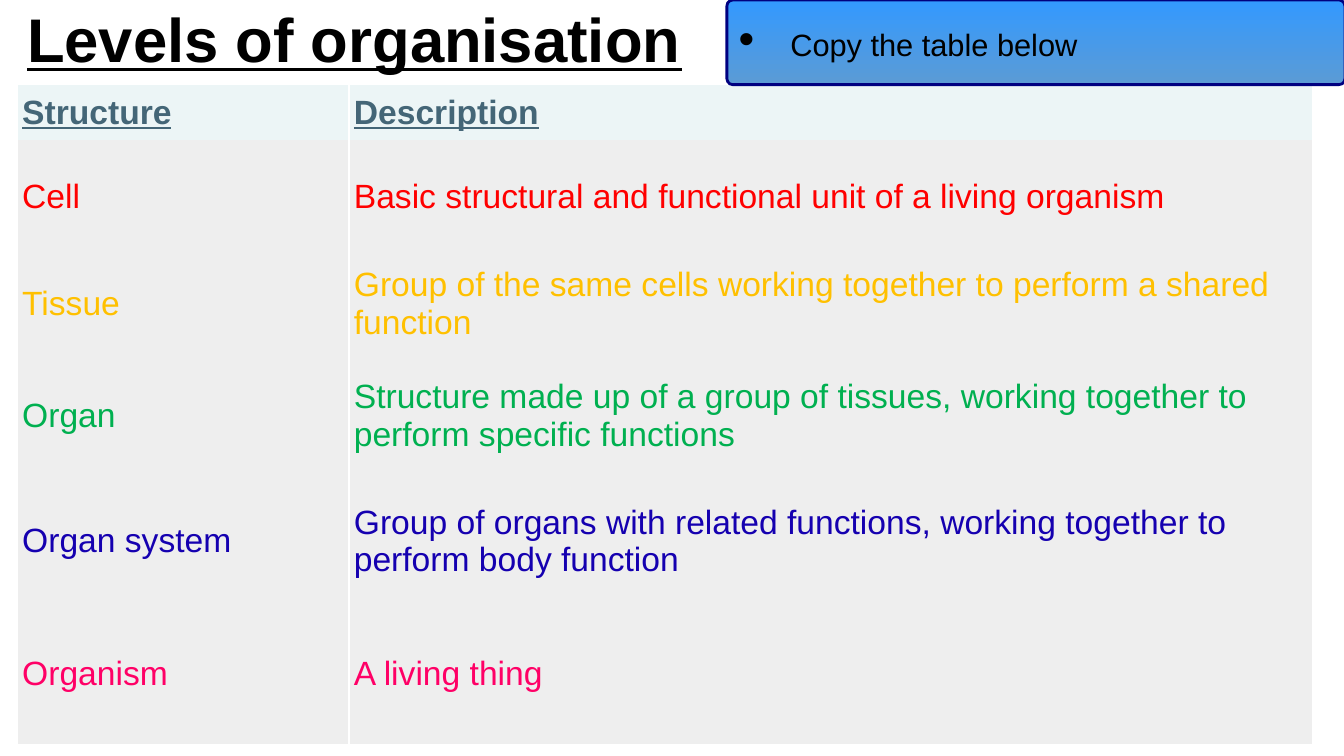
"""Build the slide on levels of organisation."""
from dataclasses import dataclass

from lxml import etree
from pptx import Presentation
from pptx import util as u
from pptx.dml.color import RGBColor
from pptx.enum import shapes, text
from pptx.oxml import ns


@dataclass(frozen=True)
class Theme:
    font: str = "Arial"
    ink: str = "000000"
    head: str = "446677"
    band: str = "ECF5F6"
    body: str = "EEEEEE"
    rule: str = "FFFFFF"
    edge: str = "000080"
    top: str = "3399FF"
    base: str = "5B9BD5"
    title: int = 44
    cell: int = 24
    task: int = 22
    mark: int = 32


THEME = Theme()
NO_GRID = "{2D5ABB26-0587-4C30-8999-92F81FD0307C}"
COLS = (3.29, 9.56)
ROWS = (
    (0.55, THEME.head, "Structure", "Description"),
    (1.13, "FF0000", "Cell", "Basic structural and functional unit of a living organism"),
    (0.99, "FFC000", "Tissue",
     "Group of the same cells working together to perform a shared function"),
    (1.23, "00B050", "Organ",
     "Structure made up of a group of tissues, working together to perform specific functions"),
    (1.26, "1500B0", "Organ system",
     "Group of organs with related functions, working together to perform body function"),
    (1.38, "FF0066", "Organism", "A living thing"),
)


def put(item, form):
    for name, val in form.items():
        setattr(item, name, val)


def box(*sides):
    return [u.Inches(side) for side in sides]


def add_run(para, words, size, tint, bold=False, line=False):
    run = para.add_run()
    run.text = words
    put(run.font, {"name": THEME.font, "size": u.Pt(size), "bold": bold, "underline": line})
    run.font.color.rgb = RGBColor.from_string(tint)


def add_title(slide, words):
    frame = slide.shapes.add_textbox(*box(0.17, -0.2, 9, 1.25)).text_frame
    put(frame, {"word_wrap": True, "vertical_anchor": text.MSO_ANCHOR.MIDDLE})
    para = frame.paragraphs[0]
    para.line_spacing = 0.9
    add_run(para, words, THEME.title, THEME.ink, True, True)


def add_rules(cell):
    props = cell._tc.get_or_add_tcPr()
    for spot, tag in enumerate(("a:lnL", "a:lnR")):
        line = etree.Element(ns.qn(tag), w=str(u.Pt(1.5)))
        fill = etree.SubElement(line, ns.qn("a:solidFill"))
        etree.SubElement(fill, ns.qn("a:srgbClr"), val=THEME.rule)
        props.insert(spot, line)


def fill_cell(cell, words, tint, head):
    pad = u.Inches(0.05)
    put(cell, {"margin_left": pad, "margin_right": pad, "margin_top": pad,
               "margin_bottom": pad, "vertical_anchor": text.MSO_ANCHOR.MIDDLE})
    cell.fill.solid()
    cell.fill.fore_color.rgb = RGBColor.from_string(THEME.band if head else THEME.body)
    add_run(cell.text_frame.paragraphs[0], words, THEME.cell, tint, head, head)
    add_rules(cell)


def add_grid(slide):
    high = sum(row[0] for row in ROWS)
    place = box(0.17, 0.84, sum(COLS), high)
    table = slide.shapes.add_table(len(ROWS), len(COLS), *place).table
    table._tbl.tblPr.find(ns.qn("a:tableStyleId")).text = NO_GRID
    for col, wide in zip(table.columns, COLS):
        col.width = u.Inches(wide)
    for rank, (tall, tint, *words) in enumerate(ROWS):
        table.rows[rank].height = u.Inches(tall)
        for spot, word in enumerate(words):
            fill_cell(table.cell(rank, spot), word, tint, rank == 0)


def add_task(slide, words):
    shape = slide.shapes.add_shape(shapes.MSO_SHAPE.ROUNDED_RECTANGLE, *box(7.21, 0, 6.13, 0.84))
    shape.shadow.inherit = False
    shape.adjustments[0] = 0.07
    shape.fill.gradient()
    shape.fill.gradient_angle = 270
    for stop, tint in zip(shape.fill.gradient_stops, (THEME.top, THEME.base)):
        stop.color.rgb = RGBColor.from_string(tint)
    shape.line.color.rgb = RGBColor.from_string(THEME.edge)
    shape.line.width = u.Pt(2)
    frame = shape.text_frame
    put(frame, {"word_wrap": True, "vertical_anchor": text.MSO_ANCHOR.TOP,
                "margin_top": u.Inches(0.1)})
    para = frame.paragraphs[0]
    para.alignment = text.PP_ALIGN.LEFT
    props = para._p.get_or_add_pPr()
    dent = u.Inches(0.39)
    props.set("marL", str(dent))
    props.set("indent", str(-dent))
    etree.SubElement(props, ns.qn("a:buFont"), typeface=THEME.font)
    etree.SubElement(props, ns.qn("a:buChar"), char="•")
    add_run(para, " ", THEME.mark, THEME.ink, True)
    add_run(para, words, THEME.task, THEME.ink)


def main():
    deck = Presentation()
    put(deck, {"slide_width": u.Inches(13.33), "slide_height": u.Inches(7.5)})
    slide = deck.slides.add_slide(deck.slide_layouts[6])
    add_title(slide, "Levels of organisation")
    add_grid(slide)
    add_task(slide, "Copy the table below")
    deck.save("out.pptx")


if __name__ == "__main__":
    main()
